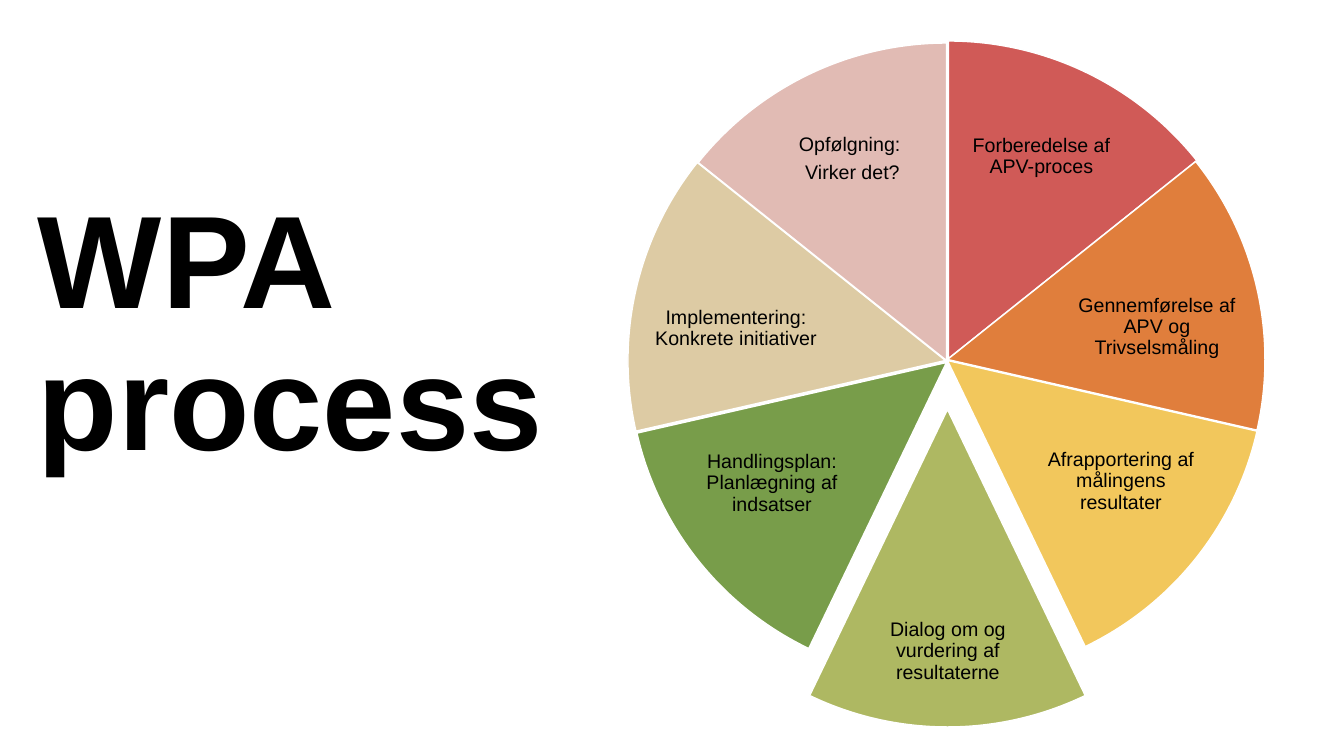
import pptx
import pptx.util
import pptx.dml.color
import pptx.enum.shapes
import pptx.enum.text

PX = 914400 / 100.8
COLORS = {
    "text": "000000", "edge": "FFFFFF", "red": "D05A57", "orange": "E07E3C",
    "yellow": "F2C75C", "lime": "AEB862", "green": "789D4A",
    "sand": "DDCBA4", "rose": "E1BBB4",
}
TITLE_FONT = {"name": "Arial", "size": pptx.util.Pt(94), "bold": True}
LABEL_FONT = {"name": "Arial", "size": pptx.util.Pt(14), "bold": False}
TITLE_PARA = {"line_spacing": 0.9, "alignment": pptx.enum.text.PP_ALIGN.LEFT}
LABEL_PARA = {"line_spacing": 0.9, "alignment": pptx.enum.text.PP_ALIGN.CENTER,
              "space_after": pptx.util.Pt(4.9)}

# Clockwise from the top: colour, slice shift, label box in the wheel, lines
STEPS = [
    ("red", (1, -2), (325, 59, 173, 110), ["Forberedelse af APV-proces"]),
    ("orange", (0, -1), (435, 226, 184, 117),
     ["Gennemførelse af APV og Trivselsmåling"]),
    ("yellow", (0, 0), (408, 378, 166, 121),
     ["Afrapportering af målingens resultater"]),
    ("lime", (0, 49), (233, 548, 170, 121),
     ["Dialog om og vurdering af resultaterne"]),
    ("green", (-1, 2), (59, 380, 166, 121),
     ["Handlingsplan: Planlægning af indsatser"]),
    ("sand", (-2, 0), (14, 227, 184, 117),
     ["Implementering: Konkrete initiativer"]),
    ("rose", (-1, 0), (136, 61, 173, 110), ["Opfølgning: ", "Virker det?"]),
]


def px(*lengths):
    return [pptx.util.Emu(round(length * PX)) for length in lengths]


def rgb(name):
    return pptx.dml.color.RGBColor.from_string(COLORS[name])


def apply(target, values):
    for name, value in values.items():
        setattr(target, name, value)


def add_text(page, box, lines, font, para_format, anchor, inset):
    frame = page.shapes.add_textbox(*px(*box)).text_frame
    margin = px(inset)[0]
    apply(frame, {"word_wrap": True, "vertical_anchor": anchor,
                  "margin_left": margin, "margin_right": margin,
                  "margin_top": margin, "margin_bottom": margin})
    for index, line in enumerate(lines):
        para = frame.add_paragraph() if index else frame.paragraphs[0]
        apply(para, para_format)
        span = para.add_run()
        span.text = line
        apply(span.font, font)
        span.font.color.rgb = rgb("text")


def add_slice(page, box, start, sweep, color):
    piece = page.shapes.add_shape(pptx.enum.shapes.MSO_SHAPE.PIE, *px(*box))
    # Pie angles are in 60000ths of a degree, scaled by 100000
    for index, degrees in enumerate((start, start + sweep)):
        piece.adjustments[index] = degrees % 360 * 0.6
    piece.shadow.inherit = False
    piece.fill.solid()
    piece.fill.fore_color.rgb = rgb(color)
    piece.line.color.rgb = rgb("edge")
    piece.line.width = pptx.util.Pt(1)


def add_wheel(page, box):
    left, top, width, height = box
    sweep = 360 / len(STEPS)
    for index, (color, shift, label, lines) in enumerate(STEPS):
        slice_box = (left + shift[0], top + shift[1], width, height)
        add_slice(page, slice_box, 270 + index * sweep, sweep, color)
        label_box = (left + label[0], top + label[1], *label[2:])
        add_text(page, label_box, lines, LABEL_FONT, LABEL_PARA,
                 pptx.enum.text.MSO_ANCHOR.MIDDLE, 2)


def main():
    deck = pptx.Presentation()
    deck.slide_width, deck.slide_height = px(1344, 756)
    page = deck.slides.add_slide(deck.slide_layouts[6])

    # Title on the left
    add_text(page, (38, 195, 529, 449), ["WPA process"], TITLE_FONT,
             TITLE_PARA, pptx.enum.text.MSO_ANCHOR.TOP, 0)
    # Process wheel on the right
    add_wheel(page, (630, 43, 635, 635))

    deck.save("out.pptx")


if __name__ == "__main__":
    main()
